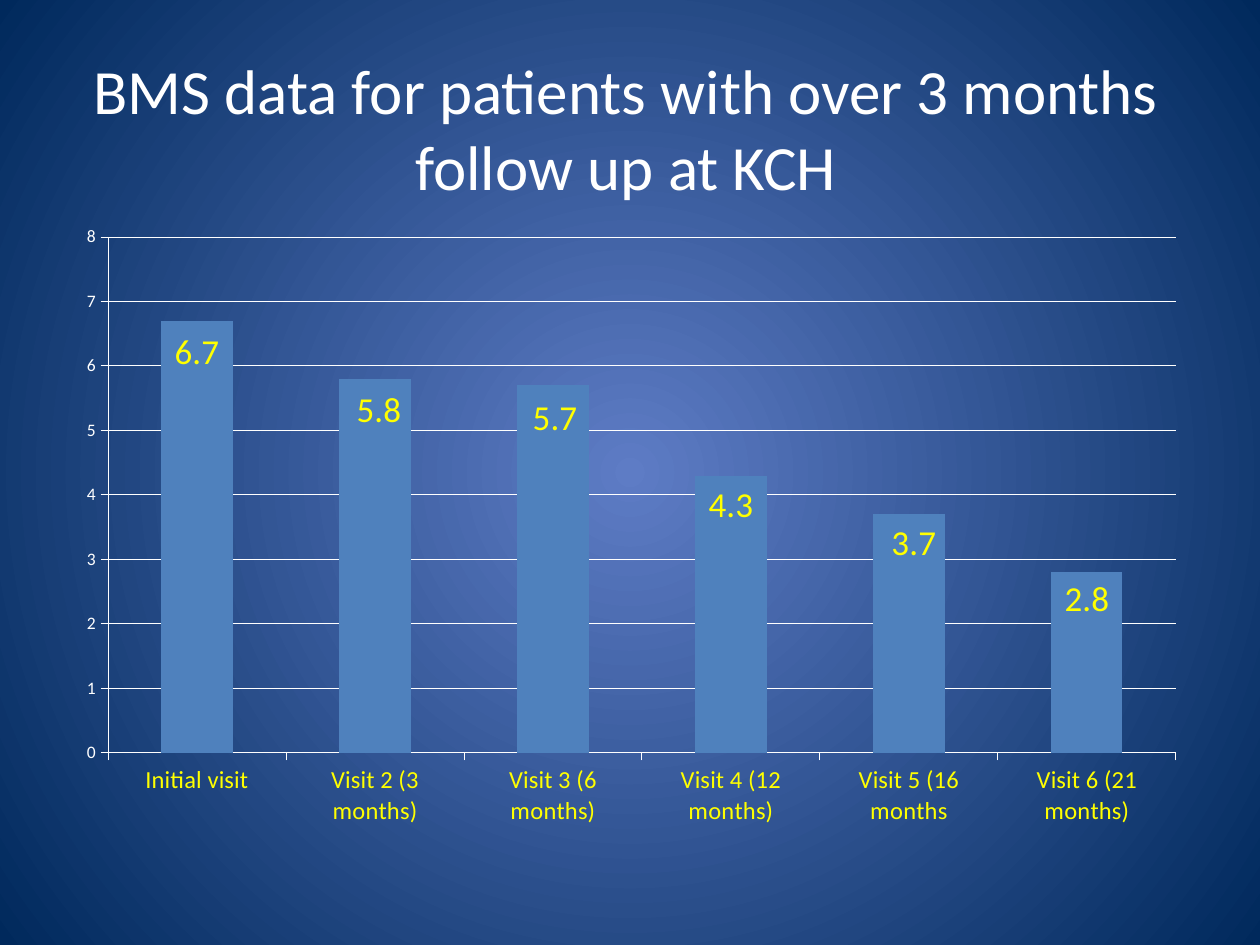
from dataclasses import dataclass

from pptx import Presentation
from pptx import util as u
from pptx.chart.data import CategoryChartData
from pptx.dml.color import RGBColor
from pptx.enum import chart as ch, text
from pptx.oxml import parse_xml
from pptx.oxml.ns import nsdecls, qn

PX = 914400 // 126
WHITE, YELLOW, BLUE = "FFFFFF", "FFFF00", "4F81BD"
GLOW, NAVY = "5E7CC5", "00295C"


@dataclass
class Box:
    x: int
    y: int
    w: int
    h: int

    def emu(self) -> list:
        return [u.Emu(v * PX) for v in (self.x, self.y, self.w, self.h)]


@dataclass
class Visit:
    label: str
    score: float
    shift_x: int = 0
    shift_y: int = 0


TITLE = Box(59, 48, 1134, 158)
CHART = Box(64, 214, 1134, 624)
PLOT = Box(108, 237, 1068, 516)
VISITS = [
    Visit("Initial visit", 6.7, 0, 5),
    Visit("Visit 2 (3 months)", 5.8, 4, 5),
    Visit("Visit 3 (6 months)", 5.7, 2, 6),
    Visit("Visit 4 (12 months)", 4.3, 0, 3),
    Visit("Visit 5 (16 months", 3.7, 5, 2),
    Visit("Visit 6 (21 months)", 2.8),
]


def rgb(value: str) -> RGBColor:
    return RGBColor.from_string(value)


def apply(obj, **values) -> None:
    for name, value in values.items():
        setattr(obj, name, value)


def style_font(font, size: int, color: str) -> None:
    apply(font, name="Calibri", size=u.Pt(size), bold=False)
    font.color.rgb = rgb(color)


def style_line(line, color: str) -> None:
    line.color.rgb = rgb(color)
    line.width = u.Pt(0.5)


def add_background(s) -> None:
    fill = s.background.fill
    fill.gradient()
    for stop, color in zip(fill.gradient_stops, (GLOW, NAVY)):
        stop.color.rgb = rgb(color)
    grad = next(s.element.iter(qn("a:gradFill")))
    grad.replace(grad.find(qn("a:lin")), parse_xml(
        f'<a:path {nsdecls("a")} path="circle">'
        '<a:fillToRect l="50000" t="50000" r="50000" b="50000"/></a:path>'))


def add_title(s, box: Box, words: str) -> None:
    tf = s.shapes.add_textbox(*box.emu()).text_frame
    apply(tf, word_wrap=True, vertical_anchor=text.MSO_ANCHOR.MIDDLE)
    p = tf.paragraphs[0]
    p.alignment = text.PP_ALIGN.CENTER
    r = p.add_run()
    r.text = words
    style_font(r.font, 36, WHITE)


def set_layout(parent, index: int, modes: str, **parts: float) -> None:
    for old in parent.findall(qn("c:layout")):
        parent.remove(old)
    sizes = "".join(f'<c:{k} val="{v:.4f}"/>' for k, v in parts.items())
    parent.insert(index, parse_xml(
        f'<c:layout {nsdecls("c")}><c:manualLayout>{modes}{sizes}'
        '</c:manualLayout></c:layout>'))


def place_plot(chart, frame: Box, plot: Box) -> None:
    modes = '<c:layoutTarget val="inner"/><c:xMode val="edge"/><c:yMode val="edge"/>'
    set_layout(next(chart.element.iter(qn("c:plotArea"))), 0, modes,
               x=(plot.x - frame.x) / frame.w, y=(plot.y - frame.y) / frame.h,
               w=plot.w / frame.w, h=plot.h / frame.h)


def add_score_labels(series, frame: Box, visits: list[Visit]) -> None:
    inside = ch.XL_LABEL_POSITION.INSIDE_END
    labels = series.data_labels
    apply(labels, show_value=True, position=inside)
    style_font(labels.font, 20, YELLOW)
    for i, visit in enumerate(visits):
        if visit.shift_x or visit.shift_y:
            label = series.points[i].data_label
            label.position = inside
            style_font(label.font, 20, YELLOW)
            element = series.data_labels._element.findall(qn("c:dLbl"))[-1]
            set_layout(element, 1, "", x=visit.shift_x / frame.w,
                       y=visit.shift_y / frame.h)


def add_score_chart(s, box: Box, plot_box: Box, visits: list[Visit]) -> None:
    data = CategoryChartData()
    data.categories = [v.label for v in visits]
    data.add_series("Series 1", [v.score for v in visits])
    chart = s.shapes.add_chart(
        ch.XL_CHART_TYPE.COLUMN_CLUSTERED, *box.emu(), data).chart
    apply(chart, has_legend=False, has_title=False)
    style_font(chart.font, 10, WHITE)
    place_plot(chart, box, plot_box)

    plot = chart.plots[0]
    apply(plot, gap_width=150, vary_by_categories=False)
    series = plot.series[0]
    fill = series.format.fill
    fill.solid()
    fill.fore_color.rgb = rgb(BLUE)
    add_score_labels(series, box, visits)

    axes = ((chart.category_axis, 14, YELLOW), (chart.value_axis, 10, WHITE))
    for axis, size, color in axes:
        axis.major_tick_mark = ch.XL_TICK_MARK.OUTSIDE
        style_font(axis.tick_labels.font, size, color)
        style_line(axis.format.line, WHITE)
    apply(chart.value_axis, minimum_scale=0, maximum_scale=8, major_unit=1,
          has_major_gridlines=True)
    style_line(chart.value_axis.major_gridlines.format.line, WHITE)


def main() -> None:
    prs = Presentation()
    apply(prs, slide_width=u.Inches(10), slide_height=u.Inches(7.5))
    s = prs.slides.add_slide(prs.slide_layouts[6])
    add_background(s)
    add_title(s, TITLE, "BMS data for patients with over 3 months follow up at KCH")
    add_score_chart(s, CHART, PLOT, VISITS)
    prs.save("out.pptx")


if __name__ == "__main__":
    main()
